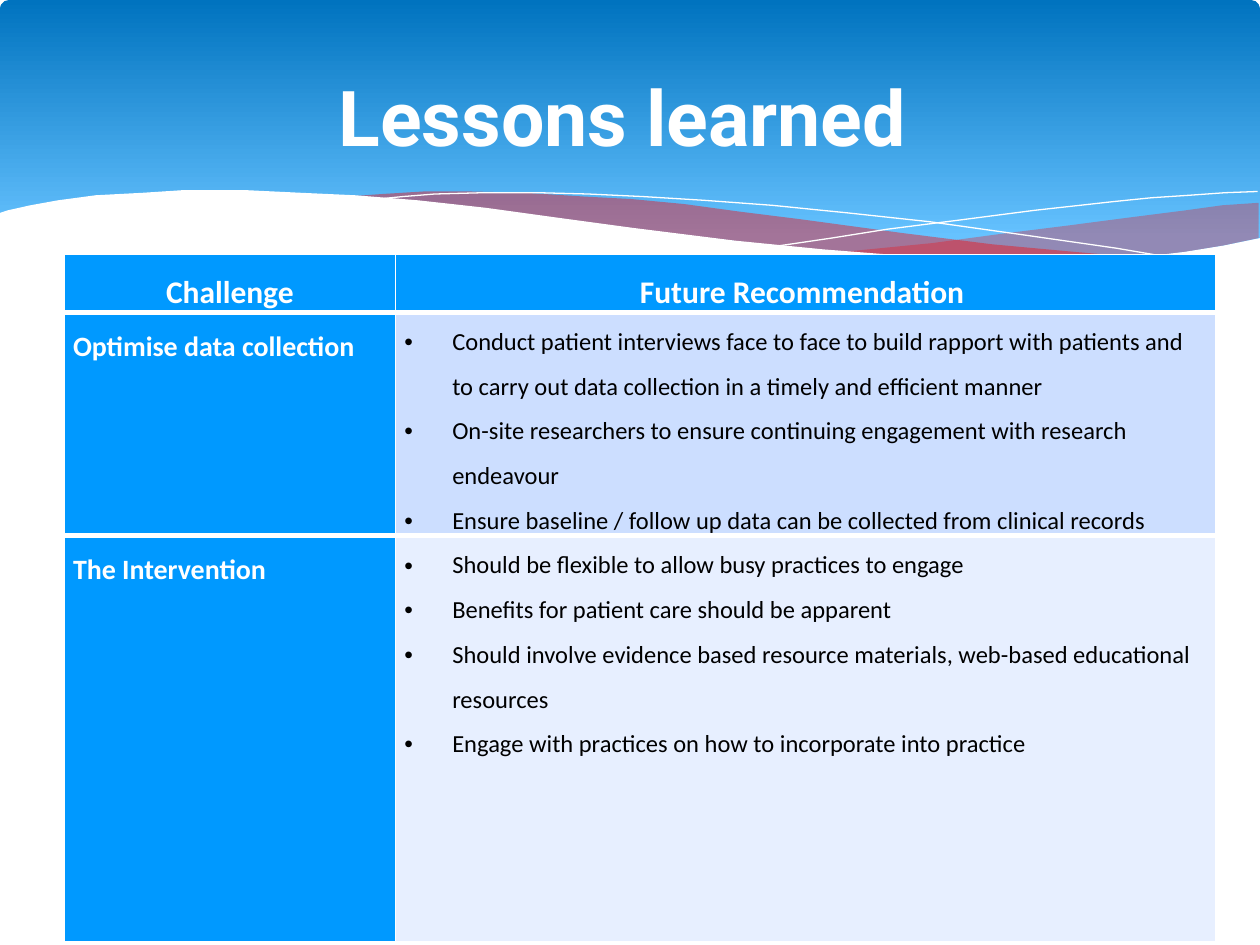
from lxml import etree
from pptx import Presentation, util as u
from pptx.dml.color import RGBColor
from pptx.enum import shapes as sh, text as tx
from pptx.oxml import ns

deck = Presentation()
deck.slide_width, deck.slide_height = u.Inches(10), u.Inches(7.5)
W, H = deck.slide_width, deck.slide_height
UNIT = W / 10
slide = deck.slides.add_slide(deck.slide_layouts[5])
WHITE, BLUE = "FFFFFF", "0099FF"


def hue(code):
    return RGBColor.from_string(code)


def write(para, words, font, align=tx.PP_ALIGN.LEFT):
    para.alignment = align
    run = para.add_run()
    run.text = words
    for key, val in font.items():
        if key == "color":
            run.font.color.rgb = hue(val)
        else:
            setattr(run.font, key, val)


# Gradient band across the top
band = slide.shapes.add_shape(sh.MSO_SHAPE.ROUNDED_RECTANGLE, 0, 0, W, round(H * 0.28))
band.adjustments[0] = 0.034
band.shadow.inherit = False
band.line.fill.background()
band.fill.gradient()
band.fill.gradient_angle = 270
for stop, (place, code) in zip(band.fill.gradient_stops, [(0, "0073BF"), (0.9, "66C2FF")]):
    stop.position = place
    stop.color.rgb = hue(code)

# Waves: points in tenths of the slide width, fill, opacity in percent
waves = [
    ([(9.99, 1.61), (9.7, 1.63), (9.41, 1.67), (8.94, 1.73), (8.48, 1.79), (7.92, 1.86),
      (7.4, 1.93), (6.69, 2), (7, 2.03), (7.43, 2.05), (7.82, 2.07), (8.18, 2.08),
      (8.61, 2.07), (8.99, 2.05), (9.41, 2), (9.71, 1.95), (9.99, 1.89)], "FF0000", 29),
    ([(9.12, 2.05), (8.53, 2), (7.88, 1.94), (7.16, 1.85), (6.35, 1.74), (5.87, 1.68),
      (5.43, 1.62), (5.01, 1.58), (4.63, 1.56), (4.16, 1.53), (3.74, 1.52), (3.36, 1.52),
      (3.04, 1.54), (2.76, 1.56), (3.14, 1.58), (3.55, 1.62), (4, 1.68), (4.47, 1.74),
      (5.31, 1.85), (6.06, 1.94), (6.57, 1.99), (7.04, 2.03), (7.47, 2.06), (7.98, 2.08),
      (8.54, 2.08), (8.84, 2.06)], "FF0000", 40),
    ([(3, 1.58), (3.2, 1.56), (3.45, 1.54), (3.82, 1.53), (4.29, 1.53), (4.67, 1.54),
      (5.1, 1.56), (5.59, 1.59), (6.13, 1.63), (6.73, 1.69), (7.38, 1.76), (8.09, 1.86),
      (8.86, 1.97), (9.27, 2.04)], None, 100),
    ([(6.19, 1.95), (6.6, 1.89), (7.04, 1.82), (7.59, 1.75), (8.21, 1.67), (8.84, 1.6),
      (9.14, 1.57), (9.44, 1.55), (9.72, 1.53), (9.98, 1.52)], None, 100),
    ([(10, 1.89), (9.71, 1.95), (9.4, 2), (9.06, 2.04), (8.67, 2.06), (8.23, 2.07),
      (7.74, 2.06), (7.18, 2.03), (6.54, 1.98), (5.83, 1.91), (5.03, 1.81), (4.44, 1.73),
      (3.86, 1.65), (3.32, 1.59), (2.82, 1.55), (2.38, 1.53), (1.97, 1.51), (1.44, 1.51),
      (1.14, 1.53), (0.76, 1.55), (0.46, 1.59), (0.24, 1.63), (0.06, 1.67), (0, 1.69),
      (0, 2.39), (10, 2.39)], WHITE, 100),
]
for points, code, alpha in waves:
    # The builder keeps whole numbers only, so count in hundredths
    dots = [(round(x * 100), round(y * 100)) for x, y in points]
    pen = slide.shapes.build_freeform(*dots[0], scale=UNIT / 100)
    pen.add_line_segments(dots[1:], close=code is not None)
    wave = pen.convert_to_shape()
    wave.shadow.inherit = False
    if code is None:
        wave.fill.background()
        wave.line.color.rgb = hue(WHITE)
        wave.line.width = 0
        continue
    wave.line.fill.background()
    wave.fill.solid()
    wave.fill.fore_color.rgb = hue(code)
    if alpha < 100:
        tint = wave.fill._xPr.find(".//" + ns.qn("a:srgbClr"))
        etree.SubElement(tint, ns.qn("a:alpha")).set("val", str(alpha * 1000))

# Title, brought in front of the waves
title = slide.shapes.title
slide.shapes._spTree.append(title._element)
box = {"left": 0.4, "top": 0.23, "width": 9.19, "height": 1.37}
for key, val in box.items():
    setattr(title, key, round(val * UNIT))
title.text_frame.vertical_anchor = tx.MSO_ANCHOR.MIDDLE
head = {"name": "Roboto", "size": u.Pt(44), "bold": True, "color": WHITE}
line = title.text_frame.paragraphs[0]
write(line, "Lessons learned", head, tx.PP_ALIGN.CENTER)
write(line, " ", {**head, "size": u.Pt(30), "bold": False}, tx.PP_ALIGN.CENTER)

# Table: each cell is a list of paragraphs
rows = [
    (["Challenge"], ["Future Recommendation "]),
    (["Optimise data collection"],
     ["Conduct patient interviews face to face to build rapport with patients and "
      "to carry out data collection in a timely and efficient manner",
      "On-site researchers to ensure continuing engagement with research endeavour",
      "Ensure baseline / follow up data can be collected from clinical records"]),
    (["The Intervention"],
     ["Should be flexible to allow busy practices to engage",
      "Benefits for patient care should be apparent",
      "Should involve evidence based resource materials, web-based educational resources",
      "Engage with practices on how to incorporate into practice"]),
]
fills = [(BLUE, BLUE), (BLUE, "CCDEFF"), (BLUE, "E7EFFF")]
wide, tall = [2.63, 6.51], [0.45, 1.75, 3.22]
grid = slide.shapes.add_table(3, 2, *(round(n * UNIT) for n in (0.51, 2.02, sum(wide), sum(tall)))).table
for col, size in zip(grid.columns, wide):
    col.width = round(size * UNIT)
for row, size in zip(grid.rows, tall):
    row.height = round(size * UNIT)

pads = {"margin_left": 0.07, "margin_right": 0.07, "margin_top": 0, "margin_bottom": 0}
for r, row in enumerate(rows):
    for c, items in enumerate(row):
        cell = grid.cell(r, c)
        cell.fill.solid()
        cell.fill.fore_color.rgb = hue(fills[r][c])
        for key, val in pads.items():
            setattr(cell, key, u.Inches(val))
        # Thick white rule between header and body
        if r < 2:
            edge = etree.Element(ns.qn("a:lnT" if r else "a:lnB"), w=str(u.Pt(3)))
            paint = etree.SubElement(edge, ns.qn("a:solidFill"))
            etree.SubElement(paint, ns.qn("a:srgbClr")).set("val", WHITE)
            cell._tc.get_or_add_tcPr().insert(0, edge)
        list_cell = r > 0 and c == 1
        size = 18 if r == 0 else 14 if list_cell else 16
        font = {"name": "Calibri", "size": u.Pt(size), "bold": not list_cell,
                "color": "000000" if list_cell else WHITE}
        align = tx.PP_ALIGN.LEFT if r else tx.PP_ALIGN.CENTER
        for i, words in enumerate(items):
            para = cell.text_frame.paragraphs[0] if i == 0 else cell.text_frame.add_paragraph()
            para.line_spacing = 1.5
            write(para, words, font, align)
            if list_cell:
                props = para._p.get_or_add_pPr()
                props.set("marL", str(u.Inches(0.38)))
                props.set("indent", str(-u.Inches(0.38)))
                etree.SubElement(props, ns.qn("a:buFont")).set("typeface", "Arial")
                etree.SubElement(props, ns.qn("a:buChar")).set("char", "•")

deck.save("out.pptx")
